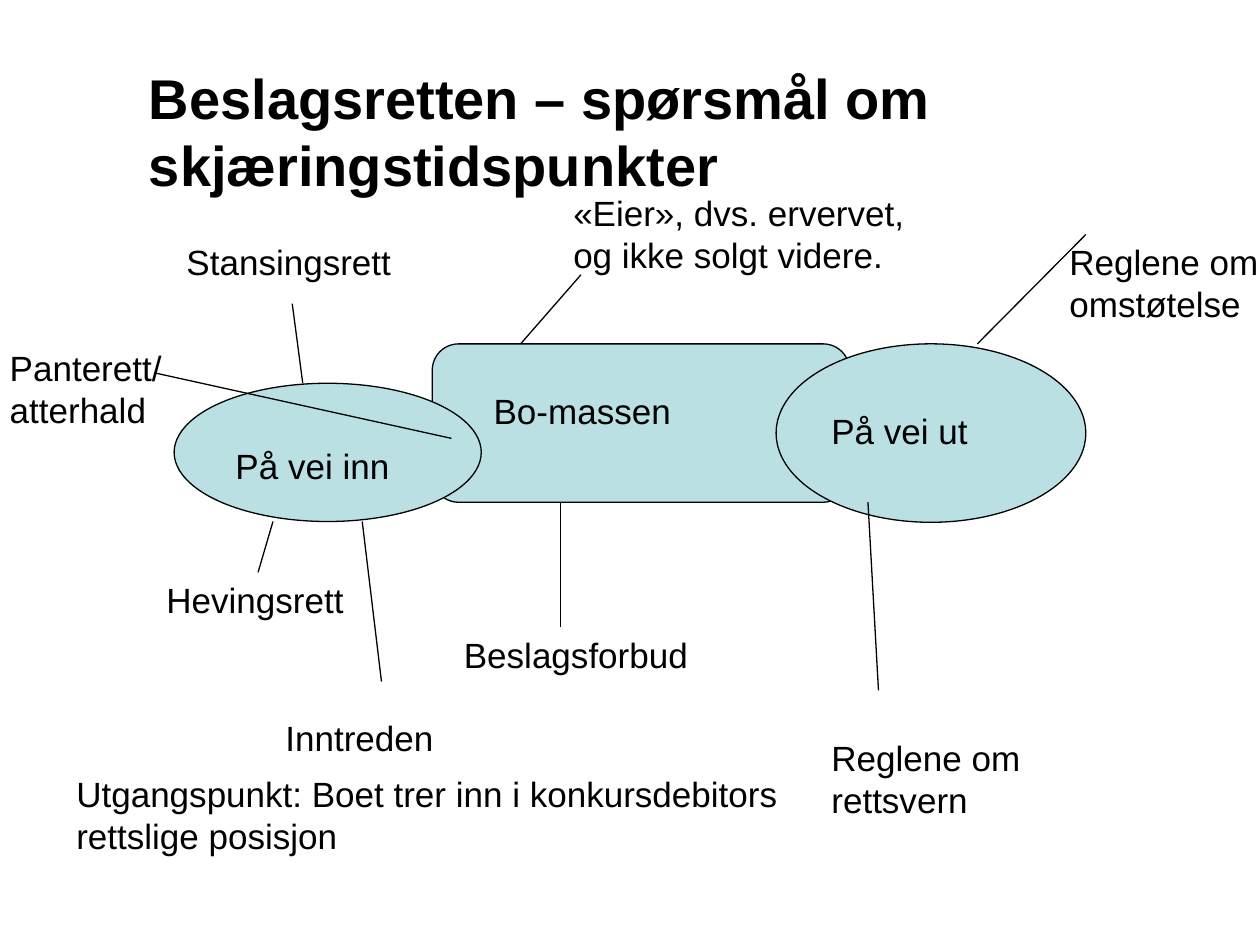
from dataclasses import dataclass

from lxml import etree
from pptx import Presentation
from pptx.dml.color import RGBColor
from pptx.enum.shapes import MSO_CONNECTOR, MSO_SHAPE
from pptx.enum.text import MSO_ANCHOR
from pptx.oxml.ns import qn
from pptx.util import Pt

LINE = MSO_CONNECTOR.STRAIGHT
ROUND = MSO_SHAPE.ROUNDED_RECTANGLE
OVAL = MSO_SHAPE.OVAL
TOP, MIDDLE = MSO_ANCHOR.TOP, MSO_ANCHOR.MIDDLE


@dataclass(frozen=True)
class Theme:
    font: str = "Arial"
    title: float = 32
    body: float = 20
    stroke: float = 0.75
    ink: RGBColor = RGBColor(0x00, 0x00, 0x00)
    fill: RGBColor = RGBColor(0xBB, 0xE0, 0xE3)


THEME = Theme()

# Places are relative to the diagram box: left, top, width, height.
# Each node: shape, its box, text, text box.
NODES = [
    (ROUND, (247, 96.5, 238.5, 90.5), "Bo-massen", (275, 119, 193, 32)),
    (OVAL, (99.5, 119, 175.5, 79), "På vei inn", (127.5, 150.5, 119, 32)),
    (OVAL, (443.5, 96.5, 177, 102), "På vei ut", (468, 130.5, 113, 32)),
]

# Each callout: text, text box, leader from node to label (x1, y1, x2, y2).
CALLOUTS = [
    ("«Eier», dvs. ervervet, og ikke solgt videre.",
     (320.5, 6, 221, 55.5), (297.5, 96.5, 332, 57)),
    ("Reglene om rettsvern",
     (468, 317.5, 175.5, 55.5), (496, 187, 502, 294.5)),
    ("Reglene om omstøtelse",
     (604, 34, 131, 55.5), (558.5, 96.5, 620.5, 34)),
    ("Hevingsrett", (88, 227, 119, 32), (156, 198, 147.5, 227)),
    ("Stansingsrett", (99.5, 34, 158.5, 32), (173, 119, 167, 73.5)),
    ("Beslagsforbud", (258, 258.5, 164, 32), (320.5, 187, 320.5, 258.5)),
    ("Inntreden", (156, 306, 153.5, 32), (207, 198, 218, 289.5)),
    ("Panterett/atterhald", (-1.5, 94.5, 102, 55.5), (258, 150.5, 88, 113)),
]


def shift(box, place):
    """Turn a place inside a box into slide lengths."""
    left, top = box[:2]
    x, y, width, height = place
    return Pt(left + x), Pt(top + y), Pt(width), Pt(height)


def add_text(slide, box, place, text, size, bold=False, anchor=TOP):
    frame = slide.shapes.add_textbox(*shift(box, place)).text_frame
    frame.word_wrap = True
    frame.vertical_anchor = anchor
    frame.text = text
    font = frame.paragraphs[0].runs[0].font
    font.name, font.size, font.bold = THEME.font, Pt(size), bold
    font.color.rgb = THEME.ink


def add_node(slide, box, kind, place, text, area):
    shape = slide.shapes.add_shape(kind, *shift(box, place))
    shape.shadow.inherit = False
    shape.fill.solid()
    shape.fill.fore_color.rgb = THEME.fill
    shape.line.color.rgb = THEME.ink
    shape.line.width = Pt(THEME.stroke)
    add_text(slide, box, area, text, THEME.body)


def add_leader(slide, box, ends):
    left, top = box[:2]
    x1, y1, x2, y2 = ends
    line = slide.shapes.add_connector(
        LINE, Pt(left + x1), Pt(top + y1), Pt(left + x2), Pt(top + y2))
    line.line.color.rgb = THEME.ink
    line.line.width = Pt(THEME.stroke)
    etree.SubElement(line._element.spPr, qn("a:effectLst"))


def add_title(slide, box):
    add_text(slide, box, (0, 0, *box[2:]),
             "Beslagsretten – spørsmål om skjæringstidspunkter",
             THEME.title, True, MIDDLE)


def add_diagram(slide, box):
    for node in NODES:
        add_node(slide, box, *node)
    for text, place, ends in CALLOUTS:
        add_leader(slide, box, ends)
        add_text(slide, box, place, text, THEME.body)


def add_note(slide, box):
    add_text(slide, box, (0, 0, *box[2:]),
             "Utgangspunkt: Boet trer inn i konkursdebitors "
             "rettslige posisjon", THEME.body)


def main():
    deck = Presentation()
    deck.slide_width, deck.slide_height = Pt(720), Pt(540)
    slide = deck.slides.add_slide(deck.slide_layouts[6])
    add_title(slide, (78, 43, 606, 63))
    add_diagram(slide, (0, 100, 720, 375))
    add_note(slide, (36.5, 438, 430.5, 55.5))
    deck.save("out.pptx")


if __name__ == "__main__":
    main()
